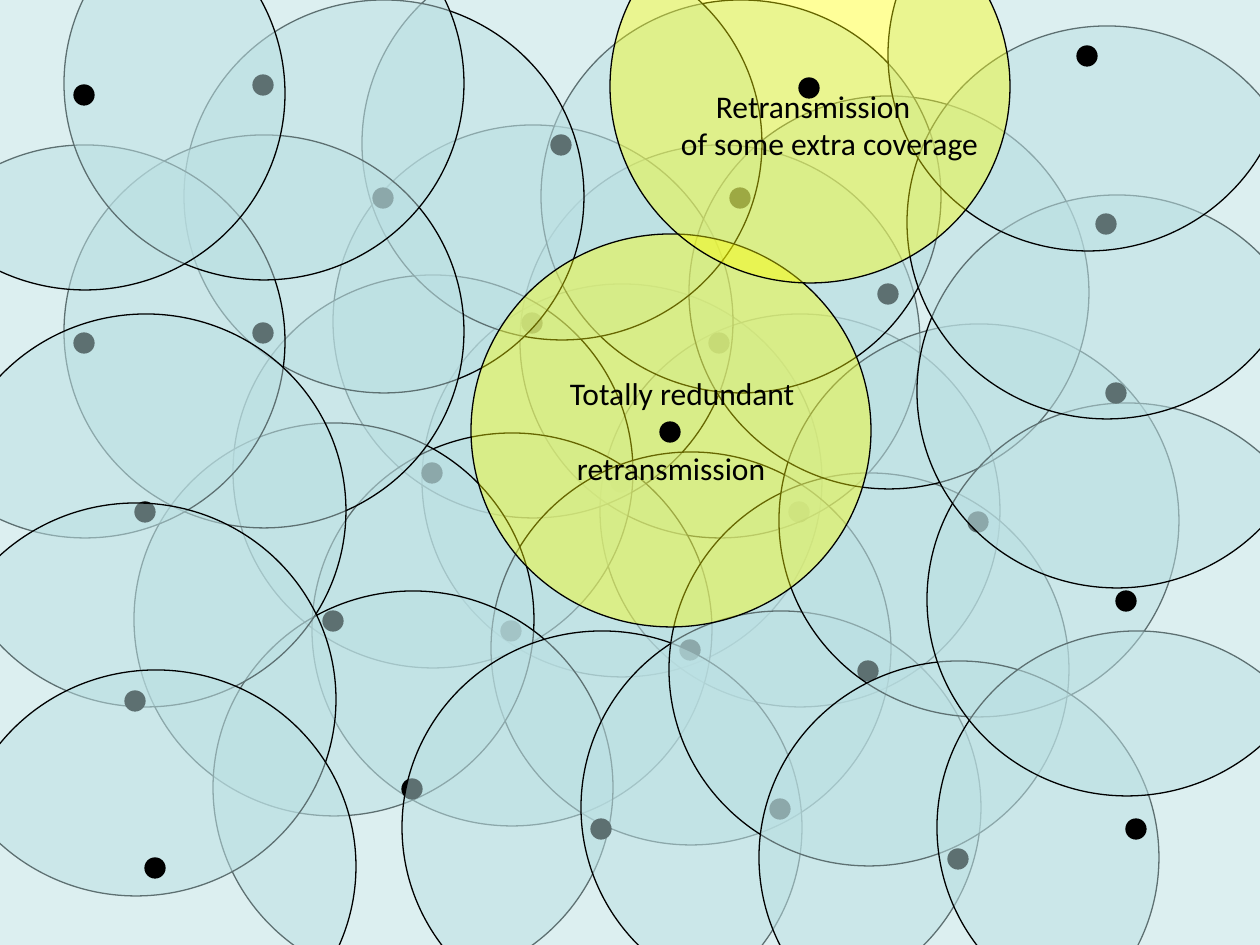
import pptx
import pptx.util
import pptx.dml.color
import pptx.enum.shapes
import pptx.enum.text
import pptx.oxml.ns
import lxml.etree

PX = 914400 // 126
COLORS = {"coverage": "BBE0E3", "retransmission": "FFFF00", "black": "000000"}
CIRCLE_WIDTH, CIRCLE_HEIGHT, DOT = 400, 393, 20
DOT_LEFT, DOT_TOP = 189, 188  # node dot, measured from its circle's corner


def add_ellipse(group, left, top, width, height, color, opacity=100):
    shape = group.shapes.add_shape(
        pptx.enum.shapes.MSO_SHAPE.OVAL, left * PX, top * PX, width * PX, height * PX)
    shape.shadow.inherit = False
    shape.fill.solid()
    shape.fill.fore_color.rgb = pptx.dml.color.RGBColor.from_string(COLORS[color])
    shape.line.color.rgb = pptx.dml.color.RGBColor.from_string(COLORS["black"])
    shape.line.width = pptx.util.Pt(0.75)
    if opacity < 100:
        fill_color = shape.fill._xPr.find(".//" + pptx.oxml.ns.qn("a:srgbClr"))
        alpha = lxml.etree.SubElement(fill_color, pptx.oxml.ns.qn("a:alpha"))
        alpha.set("val", str(opacity * 1000))
    return shape


def add_node(slide, left, top, color, opacity):
    group = slide.shapes.add_group_shape()
    circle = add_ellipse(group, left, top, CIRCLE_WIDTH, CIRCLE_HEIGHT, color, opacity)
    add_ellipse(group, left + DOT_LEFT, top + DOT_TOP, DOT, DOT, "black")
    return circle


presentation = pptx.Presentation()
presentation.slide_width = pptx.util.Inches(10)
presentation.slide_height = pptx.util.Inches(7.5)
slide = presentation.slides.add_slide(presentation.slide_layouts[6])

# Coverage areas of the nodes: left, top, from back to front
coverage_corners = [
    (422, 284), (600, 314), (520, 145), (333, 125), (233, 275), (312, 433),
    (491, 452), (134, 423), (213, 591), (402, 631), (581, 611), (669, 473),
    (779, 324), (689, 96), (541, 0), (362, -53), (184, 0), (64, 135),
    (-115, 145), (-54, 314), (-64, 503), (-44, 670), (759, 661), (937, 631),
    (927, 403), (917, 195), (907, 26), (888, -142), (64, -113), (-115, -103),
]
for left, top in coverage_corners:
    add_node(slide, left, top, "coverage", 50)

# Retransmitting nodes: left, top, top inset, lines of (text, indent, space before)
retransmissions = [
    (471, 234, 6, [("Totally redundant", 28, 0), ("retransmission", 35, 38)]),
    (610, -110, 82, [("Retransmission", 35, 0), ("of some extra coverage", 0, 0)]),
]
for left, top, inset, lines in retransmissions:
    text_frame = add_node(slide, left, top, "retransmission", 40).text_frame
    text_frame.word_wrap = False
    text_frame.vertical_anchor = pptx.enum.text.MSO_ANCHOR.MIDDLE
    text_frame.margin_top = inset * PX
    text_frame.text = "\n".join(text for text, indent, space in lines)
    for paragraph, (text, indent, space) in zip(text_frame.paragraphs, lines):
        paragraph.alignment = pptx.enum.text.PP_ALIGN.LEFT
        paragraph.space_before = pptx.util.Emu(space * PX)
        paragraph._p.get_or_add_pPr().set("marL", str(indent * PX))
        font = paragraph.runs[0].font
        font.name = "Calibri"
        font.size = pptx.util.Pt(18)
        font.color.rgb = pptx.dml.color.RGBColor.from_string(COLORS["black"])

presentation.save("out.pptx")
